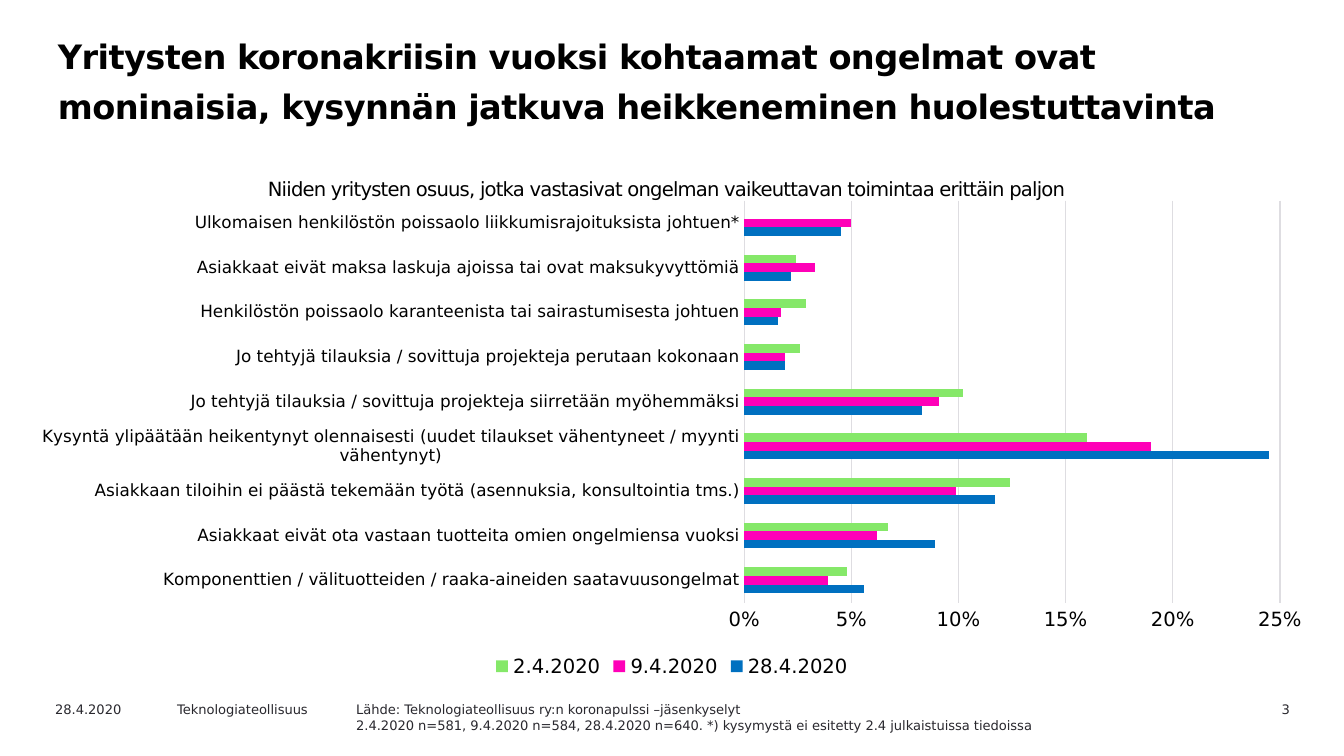
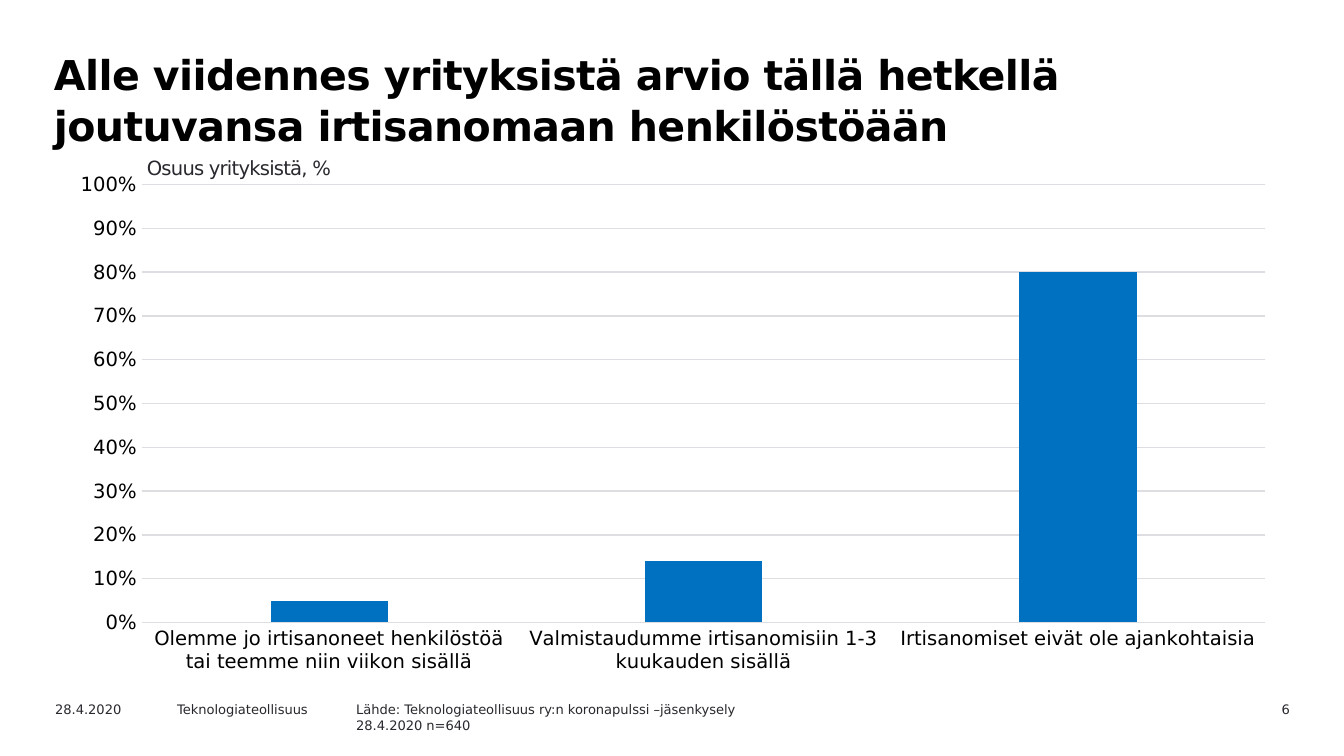
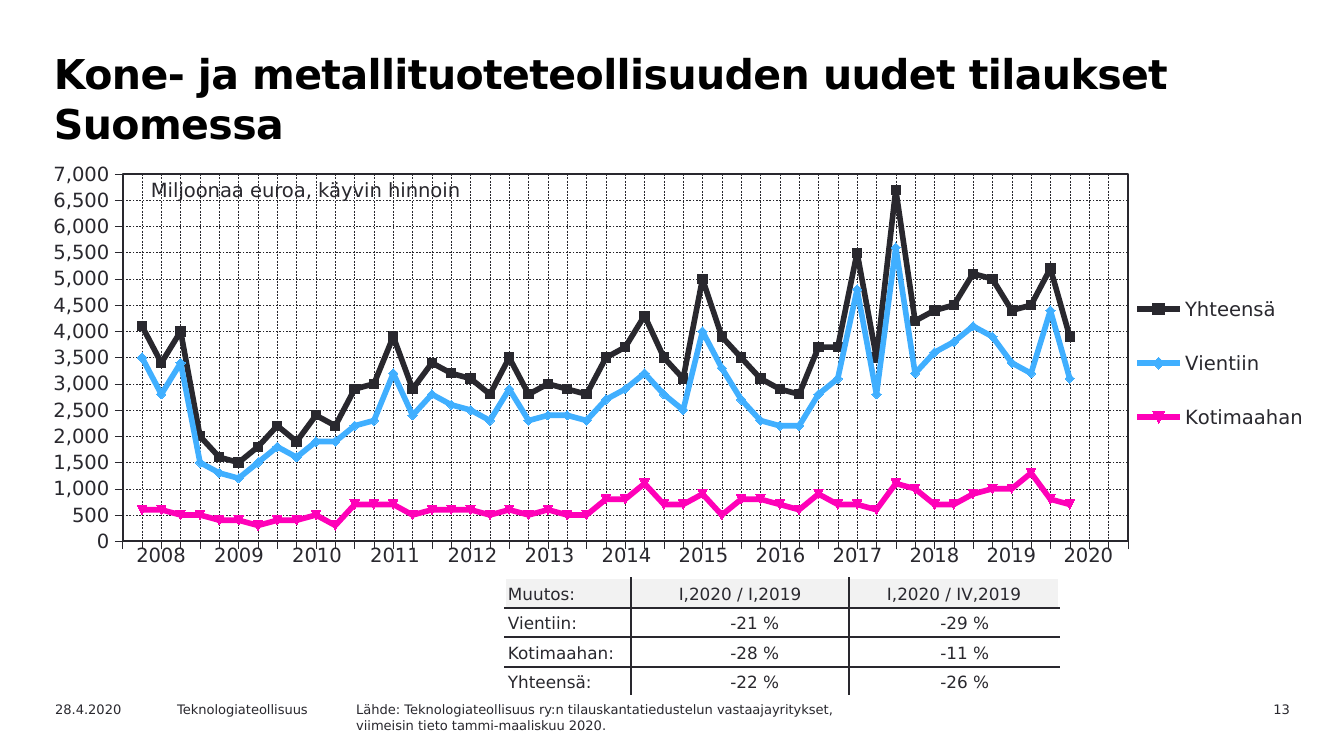
from pptx import Presentation
from pptx.chart.data import CategoryChartData
from pptx.dml.color import RGBColor
from pptx.enum.chart import XL_CHART_TYPE, XL_LEGEND_POSITION, XL_TICK_LABEL_POSITION, XL_TICK_MARK
from pptx.enum.dml import MSO_LINE
from pptx.enum.text import MSO_ANCHOR, MSO_AUTO_SIZE, PP_ALIGN
from pptx.oxml import parse_xml
from pptx.oxml.ns import nsdecls, qn
from pptx.util import Pt

PX = 9144000 / 1344  # EMU in one px
FONT = "DejaVu Sans"
BLACK = RGBColor(0x00, 0x00, 0x00)
DARK = RGBColor(0x29, 0x28, 0x2E)
WHITE = RGBColor(0xFF, 0xFF, 0xFF)
PALE = RGBColor(0xF2, 0xF2, 0xF2)
GRID = RGBColor(0xDE, 0xDD, 0xE1)
BLUE = RGBColor(0x00, 0x70, 0xC0)
SKY = RGBColor(0x40, 0xAF, 0xFF)
PINK = RGBColor(0xFF, 0x00, 0xB8)
GREEN = RGBColor(0x85, 0xE8, 0x69)
LEFT, CENTER, RIGHT = PP_ALIGN.LEFT, PP_ALIGN.CENTER, PP_ALIGN.RIGHT
TOP, BOTTOM = MSO_ANCHOR.TOP, MSO_ANCHOR.BOTTOM
NO_TICK, TICK_OUT = XL_TICK_MARK.NONE, XL_TICK_MARK.OUTSIDE
NO_LABELS = XL_TICK_LABEL_POSITION.NONE
LEGEND_BOTTOM, LEGEND_RIGHT = XL_LEGEND_POSITION.BOTTOM, XL_LEGEND_POSITION.RIGHT
BARS, COLUMNS, LINES = XL_CHART_TYPE.BAR_CLUSTERED, XL_CHART_TYPE.COLUMN_CLUSTERED, XL_CHART_TYPE.LINE
DASH = MSO_LINE.DASH
FIT_NONE = MSO_AUTO_SIZE.NONE
PLAIN_TABLE = "{2D5ABB26-0587-4C30-8999-92F81FD0307C}"


def emu(*lengths):
    return [round(length * PX) for length in lengths]


def write(frame, text, size=7, color=DARK, bold=False, align=LEFT, spacing=0, line=None):
    for i, words in enumerate(text.split("\n")):
        paragraph = frame.paragraphs[0] if i == 0 else frame.add_paragraph()
        paragraph.alignment = align
        paragraph.space_before = Pt(0)
        if line:
            paragraph.line_spacing = Pt(line)
        run = paragraph.add_run()
        run.text = words
        run.font.name, run.font.size, run.font.bold = FONT, Pt(size), bold
        run.font.color.rgb = color
        if spacing:
            run.font._element.set("spc", str(spacing))


deck = Presentation()
deck.slide_width, deck.slide_height = emu(1344, 756)

# Title, footer and source line of every slide
pages = [
    ("3", "Yritysten koronakriisin vuoksi kohtaamat ongelmat ovat moninaisia, "
     "kysynnän jatkuva heikkeneminen huolestuttavinta", (42, 19, 1212, 116), 18, 27,
     "Lähde: Teknologiateollisuus ry:n koronapulssi –jäsenkyselyt\n"
     "2.4.2020 n=581, 9.4.2020 n=584, 28.4.2020 n=640. *) kysymystä ei esitetty 2.4 julkaistuissa tiedoissa"),
    ("6", "Alle viidennes yrityksistä arvio tällä hetkellä joutuvansa irtisanomaan henkilöstöään",
     (38, 42, 1175, 95), 22, 27,
     "Lähde: Teknologiateollisuus ry:n koronapulssi –jäsenkysely\n28.4.2020 n=640"),
    ("13", "Kone- ja metallituoteteollisuuden uudet tilaukset Suomessa",
     (38, 42, 1175, 95), 22, None,
     "Lähde: Teknologiateollisuus ry:n tilauskantatiedustelun vastaajayritykset,\n"
     "viimeisin tieto tammi-maaliskuu 2020."),
]
slides = []
for number, heading, place, size, line, source in pages:
    slide = deck.slides.add_slide(deck.slide_layouts[5])
    slides.append(slide)
    title = slide.shapes.title
    title.left, title.top, title.width, title.height = emu(*place)
    frame = title.text_frame
    frame.auto_size, frame.vertical_anchor, frame.word_wrap = FIT_NONE, TOP, True
    frame.margin_left = emu(16)[0]
    write(frame, heading, size=size, color=BLACK, bold=True, spacing=-30, line=line)
    for text, left, width, align in [
        ("28.4.2020", 42, 134, LEFT),
        ("Teknologiateollisuus", 164, 191, LEFT),
        (source, 343, 816, LEFT),
        (number, 1177, 126, RIGHT),
    ]:
        footer = slide.shapes.add_textbox(*emu(left, 695, width, 24 + 18 * text.count("\n")))
        footer.text_frame.word_wrap = True
        write(footer.text_frame, text, align=align)

# Chart data
problems = [
    "Komponenttien / välituotteiden / raaka-aineiden saatavuusongelmat",
    "Asiakkaat eivät ota vastaan tuotteita omien ongelmiensa vuoksi",
    "Asiakkaan tiloihin ei päästä tekemään työtä (asennuksia, konsultointia tms.)",
    "Kysyntä ylipäätään heikentynyt olennaisesti (uudet tilaukset vähentyneet / myynti vähentynyt)",
    "Jo tehtyjä tilauksia / sovittuja projekteja siirretään myöhemmäksi",
    "Jo tehtyjä tilauksia / sovittuja projekteja perutaan kokonaan",
    "Henkilöstön poissaolo karanteenista tai sairastumisesta johtuen",
    "Asiakkaat eivät maksa laskuja ajoissa tai ovat maksukyvyttömiä",
    "Ulkomaisen henkilöstön poissaolo liikkumisrajoituksista johtuen*",
]
problem_shares = [
    ("28.4.2020", BLUE, [0.056, 0.089, 0.117, 0.245, 0.083, 0.019, 0.016, 0.022, 0.045]),
    ("9.4.2020", PINK, [0.039, 0.062, 0.099, 0.19, 0.091, 0.019, 0.017, 0.033, 0.05]),
    ("2.4.2020", GREEN, [0.048, 0.067, 0.124, 0.16, 0.102, 0.026, 0.029, 0.024, None]),
]
layoffs = [
    "Olemme jo irtisanoneet henkilöstöä tai teemme niin viikon sisällä",
    "Valmistaudumme irtisanomisiin 1-3 kuukauden sisällä",
    "Irtisanomiset eivät ole ajankohtaisia",
]
layoff_shares = [("Osuus yrityksistä", BLUE, [0.05, 0.14, 0.8])]
total = [4100, 3400, 4000, 2000, 1600, 1500, 1800, 2200, 1900, 2400, 2200, 2900, 3000, 3900, 2900, 3400, 3200,
         3100, 2800, 3500, 2800, 3000, 2900, 2800, 3500, 3700, 4300, 3500, 3100, 5000, 3900, 3500, 3100, 2900,
         2800, 3700, 3700, 5500, 3500, 6700, 4200, 4400, 4500, 5100, 5000, 4400, 4500, 5200, 3900]
exports = [3500, 2800, 3400, 1500, 1300, 1200, 1500, 1800, 1600, 1900, 1900, 2200, 2300, 3200, 2400, 2800, 2600,
           2500, 2300, 2900, 2300, 2400, 2400, 2300, 2700, 2900, 3200, 2800, 2500, 4000, 3300, 2700, 2300, 2200,
           2200, 2800, 3100, 4800, 2800, 5600, 3200, 3600, 3800, 4100, 3900, 3400, 3200, 4400, 3100]
domestic = [600, 600, 500, 500, 400, 400, 300, 400, 400, 500, 300, 700, 700, 700, 500, 600, 600, 600, 500, 600,
            500, 600, 500, 500, 800, 800, 1100, 700, 700, 900, 500, 800, 800, 700, 600, 900, 700, 700, 600, 1100,
            1000, 700, 700, 900, 1000, 1000, 1300, 800, 700]
quarters = [str(n) for n in range(1, 54)]
orders = [
    (name, color, [None] + values + [None] * 3)
    for name, color, values in [("Yhteensä", DARK, total), ("Vientiin", SKY, exports), ("Kotimaahan", PINK, domestic)]
]

# Charts: all three share axis, grid and legend formatting
charts = []
for slide, kind, place, names, rows, fmt, top, step, label_size, legend_side in [
    (slides[0], BARS, (16, 191, 1312, 492), problems, problem_shares, "0%", 0.25, 0.05, 9, LEGEND_BOTTOM),
    (slides[1], COLUMNS, (56, 163, 1234, 520), layoffs, layoff_shares, "0%", 1, 0.1, 10.5, None),
    (slides[2], LINES, (16, 156, 1302, 441), quarters, orders, "#,##0", 7000, 500, 10.5, LEGEND_RIGHT),
]:
    is_line = kind == LINES
    ink = DARK if is_line else BLACK
    data = CategoryChartData(number_format=fmt)
    data.categories = names
    for name, color, values in rows:
        data.add_series(name, values)
    chart = slide.shapes.add_chart(kind, *emu(*place), data).chart
    charts.append(chart)
    chart.has_title = False
    chart.font.name, chart.font.size = FONT, Pt(10)
    chart.font.color.rgb = DARK

    category_axis, value_axis = chart.category_axis, chart.value_axis
    value_axis.minimum_scale, value_axis.maximum_scale, value_axis.major_unit = 0, top, step
    value_axis.tick_labels.number_format = fmt
    value_axis.tick_labels.number_format_is_linked = False
    category_axis.has_major_gridlines = is_line
    value_axis.has_major_gridlines = True
    for axis, size in [(category_axis, label_size), (value_axis, 10.5)]:
        axis.major_tick_mark = TICK_OUT if is_line else NO_TICK
        axis.minor_tick_mark = NO_TICK
        font = axis.tick_labels.font
        font.name, font.size, font.bold = FONT, Pt(size), False
        font.color.rgb = ink
        axis.format.line.color.rgb = DARK if is_line else GRID
        axis.format.line.width = Pt(0.22 if is_line else 0.75)
        if axis.has_major_gridlines:
            grid = axis.major_gridlines.format.line
            grid.color.rgb = DARK if is_line else GRID
            grid.width = Pt(0.25 if is_line else 0.75)
            if is_line:
                grid.dash_style = DASH
    if is_line:
        category_axis.tick_label_position = NO_LABELS
    else:
        value_axis.format.line.fill.background()
        chart.plots[0].gap_width = 219
        chart.plots[0].vary_by_categories = False

    for series, (name, color, values) in zip(chart.plots[0].series, rows):
        if is_line:
            series.smooth = False
            series.marker.style = None
            series.format.line.color.rgb = color
            series.format.line.width = Pt(3)
        else:
            series.format.fill.solid()
            series.format.fill.fore_color.rgb = color

    chart.has_legend = legend_side is not None
    if chart.has_legend:
        chart.legend.position = legend_side
        chart.legend.include_in_layout = False
        chart.legend.font.name, chart.legend.font.size = FONT, Pt(10.5)
        chart.legend.font.color.rgb = ink
charts[1].plots[0].overlap = -27

# Order chart: fixed plot and legend areas, framed plot, points on the gridlines
order_chart = charts[2]
plot_area = order_chart._chartSpace.chart.plotArea
for part, index, target, area in [
    (plot_area, 0, '<c:layoutTarget val="inner"/>', (0.082, 0.041, 0.772, 0.833)),
    (order_chart.legend._element, 1, "", (0.86, 0.25, 0.13, 0.44)),
]:
    for automatic in part.findall(qn("c:layout")):
        part.remove(automatic)
    sides = "".join(f'<c:{side} val="{value}"/>' for side, value in zip("xywh", area))
    part.insert(index, parse_xml(
        f'<c:layout {nsdecls("c")}><c:manualLayout>{target}<c:xMode val="edge"/><c:yMode val="edge"/>'
        f'{sides}</c:manualLayout></c:layout>'))
plot_area.append(parse_xml(
    f'<c:spPr {nsdecls("c", "a")}><a:noFill/><a:ln w="12700"><a:solidFill><a:srgbClr val="{DARK}"/>'
    '</a:solidFill></a:ln></c:spPr>'))
orders_axis = order_chart.value_axis._element
for crossing in orders_axis.findall(qn("c:crossBetween")):
    orders_axis.remove(crossing)
orders_axis.find(qn("c:crosses")).addnext(parse_xml(f'<c:crossBetween {nsdecls("c")} val="midCat"/>'))

# Chart captions
for slide, text, place, inset, color, spacing in [
    (slides[0], "Niiden yritysten osuus, jotka vastasivat ongelman vaikeuttavan toimintaa erittäin paljon",
     (263, 172, 868, 35), (5, 5), BLACK, -40),
    (slides[1], "Osuus yrityksistä, %", (142, 151, 456, 35), (5, 5), DARK, -40),
    (slides[2], "Miljoonaa euroa, käyvin hinnoin", (138, 171, 349, 36), (13, 7), DARK, 0),
]:
    caption = slide.shapes.add_textbox(*emu(*place)).text_frame
    caption.word_wrap = True
    caption.margin_left, caption.margin_top = emu(*inset)
    caption.margin_right, caption.margin_bottom = emu(*inset)
    write(caption, text, size=10.5, color=color, spacing=spacing)

# Tables: changes in orders, and the years under the chart
changes = [
    ("Muutos:", "I,2020 / I,2019", "I,2020 / IV,2019"),
    ("Vientiin:", "-21 %", "-29 %"),
    ("Kotimaahan:", "-28 %", "-11 %"),
    ("Yhteensä:", "-22 %", "-26 %"),
]
years = [[str(year) for year in range(2008, 2021)]]
for rows, left, top, widths, heights in [
    (changes, 505, 578, [126, 218, 210], [30, 29, 30, 29]),
    (years, 122, 538, [78] * 4 + [77] * 9, [42]),
]:
    table = slides[2].shapes.add_table(
        len(rows), len(widths), *emu(left, top, sum(widths), sum(heights))).table
    table.first_row = table.horz_banding = False
    table._tbl.tblPr.find(qn("a:tableStyleId")).text = PLAIN_TABLE
    for column, width in zip(table.columns, emu(*widths)):
        column.width = width
    for row, height in zip(table.rows, emu(*heights)):
        row.height = height
    for r, texts in enumerate(rows):
        for c, text in enumerate(texts):
            cell = table.cell(r, c)
            if rows is years:
                cell.fill.background()
                write(cell.text_frame, text, size=10.5, align=CENTER)
                continue
            is_figure = r > 0 and c > 0
            cell.vertical_anchor = BOTTOM
            cell.margin_left, cell.margin_top, cell.margin_right, cell.margin_bottom = emu(
                3, 3, 70 if is_figure else 3, 3)
            write(cell.text_frame, text, size=9, align=RIGHT if is_figure else CENTER if c else LEFT)
            for side, outer in [("L", c == 0), ("R", c == 2), ("T", r == 0), ("B", r == 3)]:
                cell._tc.get_or_add_tcPr().append(parse_xml(
                    f'<a:ln{side} {nsdecls("a")} w="12700"><a:solidFill>'
                    f'<a:srgbClr val="{WHITE if outer else DARK}"/></a:solidFill></a:ln{side}>'))
            cell.fill.solid()
            cell.fill.fore_color.rgb = WHITE if r else PALE

deck.save("out.pptx")
